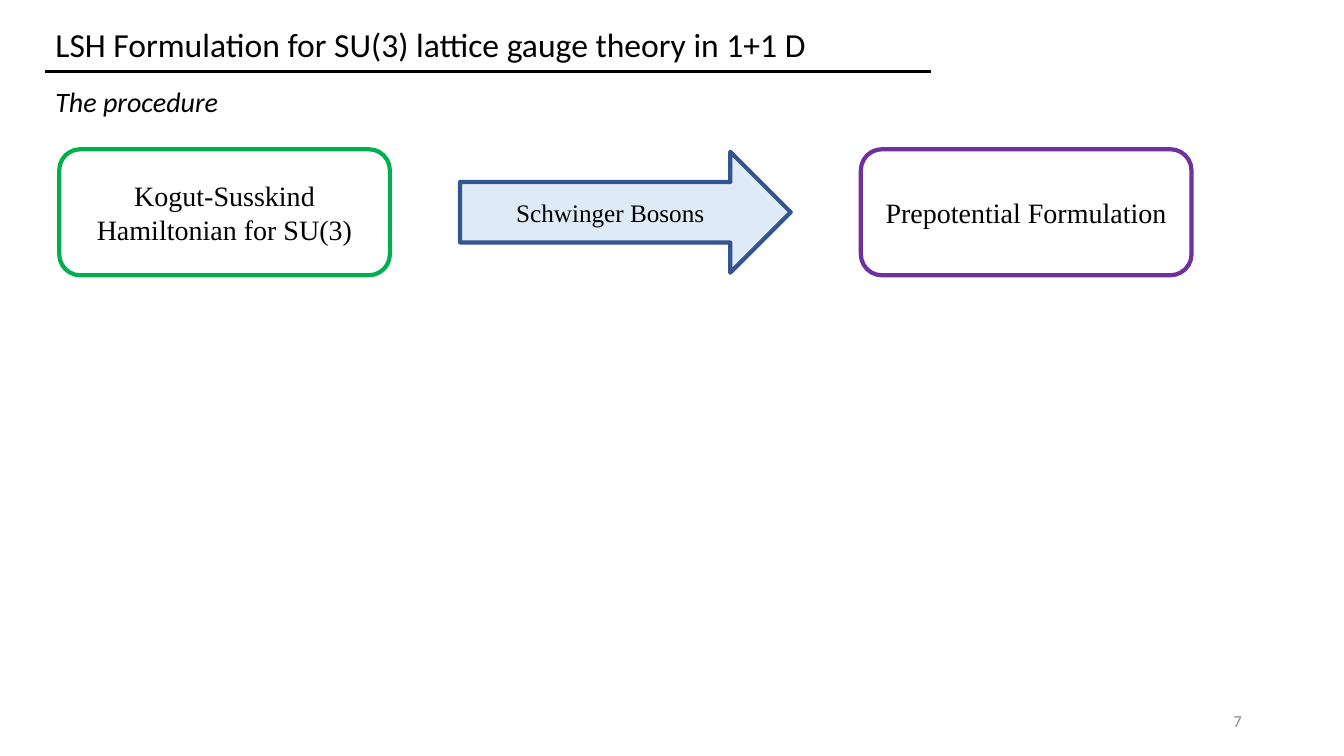
import pptx
import pptx.util
import pptx.dml.color
import pptx.enum.shapes
import pptx.enum.text
import pptx.oxml.ns
import lxml.etree

Pt = pptx.util.Pt
SHAPES = pptx.enum.shapes.MSO_SHAPE
ALIGN = pptx.enum.text.PP_ALIGN

COLORS = {
    "black": "000000", "white": "FFFFFF", "grey": "8C8C8C",
    "green": "00B050", "purple": "7030A0",
    "blue": "325491", "pale_blue": "DEEBF7",
}
TITLE = "LSH Formulation for SU(3) lattice gauge theory in 1+1 D"
SUBTITLE = "The procedure"
SLIDE_NUMBER = "7"
STEPS = [
    ("Kogut-Susskind Hamiltonian for SU(3)", SHAPES.ROUNDED_RECTANGLE, "white", "green", 90, 20),
    ("Schwinger Bosons", SHAPES.RIGHT_ARROW, "pale_blue", "blue", 86.4, 18),
    ("Prepotential Formulation", SHAPES.ROUNDED_RECTANGLE, "white", "purple", 90, 20),
]
LEFT = 32.4
STEP_LEFT, STEP_WIDTH, STEP_PITCH, STEP_MIDDLE = 42.3, 236.2, 286.3, 151.6


def color(name):
    return pptx.dml.color.RGBColor.from_string(COLORS[name])


def place(shape, left, top, width, height):
    shape.left, shape.top = Pt(left), Pt(top)
    shape.width, shape.height = Pt(width), Pt(height)


def write(shape, text, size, font="Calibri", tint="black", align=ALIGN.LEFT, italic=False):
    frame = shape.text_frame
    frame.word_wrap = True
    frame.auto_size = pptx.enum.text.MSO_AUTO_SIZE.NONE
    frame.vertical_anchor = pptx.enum.text.MSO_ANCHOR.MIDDLE
    paragraph = frame.paragraphs[0]
    paragraph.alignment = align
    run = paragraph.add_run()
    run.text = text
    run.font.name = font
    run.font.size = Pt(size)
    run.font.italic = italic
    run.font.color.rgb = color(tint)
    return paragraph


def add_label(slide, box, text, size, **style):
    label = slide.shapes.add_textbox(*[Pt(length) for length in box])
    write(label, text, size, **style)


def add_rule(slide, left, right, top):
    rule = slide.shapes.add_connector(
        pptx.enum.shapes.MSO_CONNECTOR.STRAIGHT, Pt(left), Pt(top), Pt(right), Pt(top))
    rule.line.color.rgb = color("black")
    rule.line.width = Pt(2.25)
    lxml.etree.SubElement(rule._element.spPr, pptx.oxml.ns.qn("a:effectLst"))


def add_step(slide, index, text, kind, fill, outline, height, size):
    left = STEP_LEFT + index * STEP_PITCH
    top = STEP_MIDDLE - height / 2
    shape = slide.shapes.add_shape(kind, Pt(left), Pt(top), Pt(STEP_WIDTH), Pt(height))
    shape.shadow.inherit = False
    shape.fill.solid()
    shape.fill.fore_color.rgb = color(fill)
    shape.line.color.rgb = color(outline)
    shape.line.width = Pt(3)
    write(shape, text, size, font="Times New Roman", align=ALIGN.CENTER)


def main():
    presentation = pptx.Presentation()
    presentation.slide_width, presentation.slide_height = Pt(960), Pt(540)
    slide = presentation.slides.add_slide(presentation.slide_layouts[5])

    title = slide.shapes.title
    place(title, LEFT, 15.8, 620.6, 35.3)
    write(title, TITLE, 24).line_spacing = 0.9
    add_rule(slide, LEFT, 665.3, 51.1)
    add_label(slide, (LEFT, 58.3, 599, 27.4), SUBTITLE, 20, italic=True)

    for index, step in enumerate(STEPS):
        add_step(slide, index, *step)

    add_label(slide, (678.2, 500.4, 216, 28.8), SLIDE_NUMBER, 12, tint="grey", align=ALIGN.RIGHT)
    presentation.save("out.pptx")


if __name__ == "__main__":
    main()
